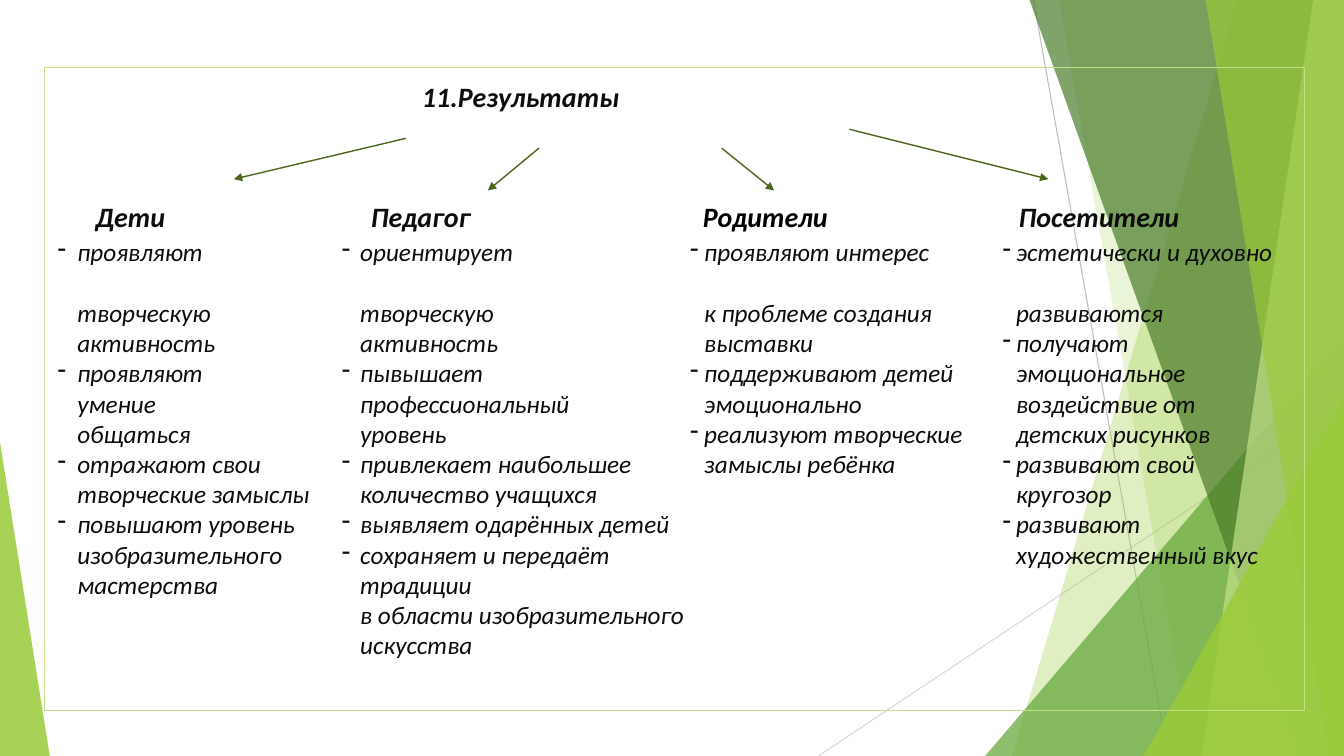
from lxml.etree import SubElement
from pptx import Presentation
from pptx.dml.color import RGBColor
from pptx.enum.shapes import MSO_CONNECTOR, MSO_SHAPE
from pptx.enum.text import MSO_ANCHOR, PP_ALIGN
from pptx.oxml.ns import qn
from pptx.util import Inches, Pt

LIME = RGBColor(0x99, 0xCB, 0x38)
PALE_LIME = RGBColor(0xC2, 0xE0, 0x88)
GREEN = RGBColor(0x63, 0xA5, 0x37)
DARK_GREEN = RGBColor(0x4A, 0x7C, 0x29)
ARROW_GREEN = RGBColor(0x4D, 0x67, 0x1B)
GRAY = RGBColor(0xBF, 0xBF, 0xBF)
LIGHT_GRAY = RGBColor(0xD9, 0xD9, 0xD9)
INK = RGBColor(0x0D, 0x0D, 0x0D)
BLACK = RGBColor(0, 0, 0)


class SlideBuilder:
    """Draws on one slide; lengths are percentages of its width and height."""

    font = "Calibri"
    heading_size = Pt(20)
    body_size = Pt(18)
    line_pitch = Pt(21.6)

    def __init__(self, presentation):
        self.width = presentation.slide_width
        self.height = presentation.slide_height
        self.slide = presentation.slides.add_slide(presentation.slide_layouts[6])
        self.shapes = self.slide.shapes

    def x(self, share):
        return round(self.width * share / 100)

    def y(self, share):
        return round(self.height * share / 100)

    def box(self, left, top, width, height):
        return self.x(left), self.y(top), self.x(width), self.y(height)

    def paint(self, shape, color, opacity):
        shape.shadow.inherit = False
        shape.line.fill.background()
        shape.fill.solid()
        shape.fill.fore_color.rgb = color
        color_element = shape.fill._xPr.find(qn("a:solidFill"))[0]
        SubElement(color_element, qn("a:alpha"), val=str(opacity * 1000))

    def band(self, top_left, bottom_left, color, opacity):
        """A full-height band that reaches the right edge."""
        builder = self.shapes.build_freeform(self.x(top_left), 0)
        builder.add_line_segments([(self.width, 0), (self.width, self.height),
                                   (self.x(bottom_left), self.height)])
        self.paint(builder.convert_to_shape(), color, opacity)

    def triangle(self, bounds, apex, color, opacity):
        shape = self.shapes.add_shape(MSO_SHAPE.ISOSCELES_TRIANGLE, *self.box(*bounds))
        shape.adjustments[0] = apex
        self.paint(shape, color, opacity)

    def frame(self, bounds, color):
        shape = self.shapes.add_shape(MSO_SHAPE.RECTANGLE, *self.box(*bounds))
        shape.shadow.inherit = False
        shape.fill.background()
        shape.line.color.rgb = color
        shape.line.width = Pt(0.75)

    def line(self, start, end, color, width=0.75, arrow=False):
        connector = self.shapes.add_connector(
            MSO_CONNECTOR.STRAIGHT, self.x(start[0]), self.y(start[1]),
            self.x(end[0]), self.y(end[1]))
        connector.line.color.rgb = color
        connector.line.width = Pt(width)
        if arrow:
            SubElement(connector.line._get_or_add_ln(), qn("a:tailEnd"), type="triangle")
        SubElement(connector._element.spPr, qn("a:effectLst"))

    def text_frame(self, bounds):
        frame = self.shapes.add_textbox(*self.box(*bounds)).text_frame
        frame.word_wrap = True
        frame.vertical_anchor = MSO_ANCHOR.TOP
        frame.margin_left = frame.margin_right = frame.margin_top = frame.margin_bottom = 0
        return frame

    def run(self, paragraph, text, size, color=INK, bold=False):
        run = paragraph.add_run()
        run.text = text
        run.font.name = self.font
        run.font.size = size
        run.font.bold = bold
        run.font.italic = True
        run.font.color.rgb = color

    def heading(self, left, top, text, color=INK):
        paragraph = self.text_frame((left, top, 20, 4.6)).paragraphs[0]
        paragraph.alignment = PP_ALIGN.LEFT
        self.run(paragraph, text, self.heading_size, color, bold=True)

    def dash_list(self, left, top, right, hang, lead, rest, items):
        """Dashed items; the first one has a gap before its remaining lines."""
        indent = Pt(hang)
        start = left - indent / self.width * 100
        frame = self.text_frame((start, top, right - start, 56))
        for index, item in enumerate([lead, rest, *items]):
            paragraph = frame.paragraphs[0] if index == 0 else frame.add_paragraph()
            paragraph.alignment = PP_ALIGN.LEFT
            paragraph.line_spacing = self.line_pitch
            continued = index == 1
            if continued:
                paragraph.space_before = self.line_pitch
            properties = paragraph._p.get_or_add_pPr()
            properties.set("marL", str(indent))
            properties.set("indent", str(0 if continued else -indent))
            if not continued:
                SubElement(properties, qn("a:buChar"), char="-")
            for number, text in enumerate(item.split("\n")):
                if number:
                    paragraph.add_line_break()
                self.run(paragraph, text, self.body_size)


# Heading left, text left, right edge, dash indent in points, heading, colour, list
COLUMNS = [
    (7.1, 5.75, 24, 14, "Дети", INK, "проявляют", "творческую\nактивность",
     ["проявляют\nумение\nобщаться", "отражают свои\nтворческие замыслы",
      "повышают уровень\nизобразительного\nмастерства"]),
    (27.6, 26.8, 51.8, 13, "Педагог", INK, "ориентирует", "творческую\nактивность",
     ["пывышает\nпрофессиональный\nуровень",
      "привлекает наибольшее\nколичество учащихся", "выявляет одарённых детей",
      "сохраняет и передаёт\nтрадиции\nв области изобразительного\nискусства"]),
    (52.3, 52.4, 73, 10, "Родители", BLACK, "проявляют интерес",
     "к проблеме создания\nвыставки",
     ["поддерживают детей\nэмоционально", "реализуют творческие\nзамыслы ребёнка"]),
    (75.8, 75.6, 96.5, 9.5, "Посетители", INK, "эстетически и духовно",
     "развиваются",
     ["получают\nэмоциональное\nвоздействие от\nдетских рисунков",
      "развивают свой\nкругозор", "развивают\nхудожественный вкус"]),
]

ARROWS = [
    ((63.2, 17.1), (78, 23.7)),
    ((53.7, 19.6), (57.6, 25.2)),
    ((40.1, 19.6), (36.3, 25.2)),
    ((30.2, 18.3), (17.4, 23.7)),
]


def main():
    presentation = Presentation()
    presentation.slide_width = Inches(13.33)
    presentation.slide_height = Inches(7.5)
    builder = SlideBuilder(presentation)

    # Background facets
    builder.line((76.9, 0), (86.9, 100), GRAY)
    builder.line((100, 53.7), (60.9, 100), LIGHT_GRAY)
    builder.band(92.1, 75.3, LIME, 30)
    builder.band(78.8, 88.7, LIME, 20)
    builder.triangle((73.3, 44.4, 26.7, 55.6), 1, GREEN, 72)
    builder.band(76.6, 96.8, DARK_GREEN, 70)
    builder.band(97.7, 89.4, PALE_LIME, 70)
    builder.band(89.7, 98.9, LIME, 65)
    builder.triangle((85.1, 52.4, 14.9, 47.6), 1, LIME, 80)
    builder.triangle((0, 58.5, 3.7, 41.5), 0, LIME, 85)

    # Frame and title
    builder.frame((3.3, 8.9, 93.8, 85.1), PALE_LIME)
    builder.heading(31.4, 10.5, "11.Результаты")

    # Four groups of results
    for heading_left, left, right, hang, name, color, lead, rest, items in COLUMNS:
        builder.heading(heading_left, 26.4, name, color)
        builder.dash_list(left, 31.3, right, hang, lead, rest, items)

    # Arrows from the title to the groups
    for start, end in ARROWS:
        builder.line(start, end, ARROW_GREEN, 1, arrow=True)

    presentation.save("out.pptx")


if __name__ == "__main__":
    main()
